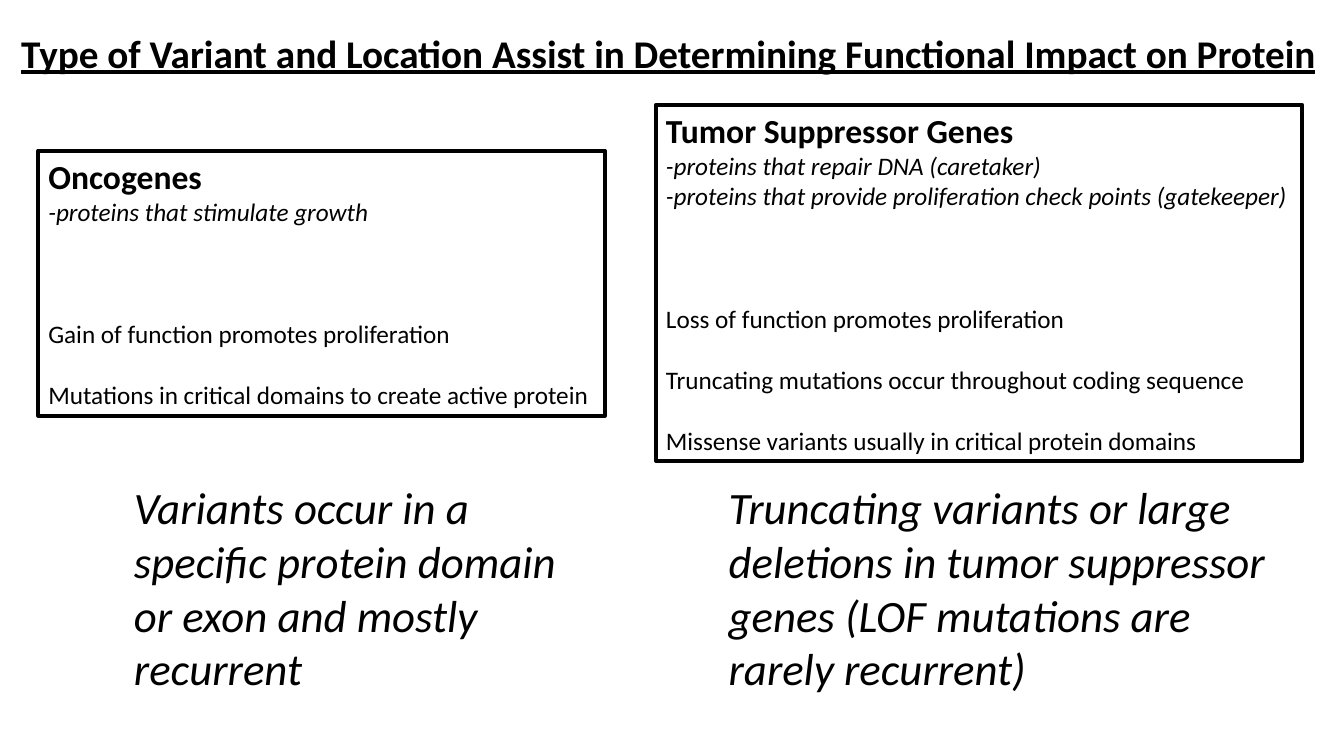
import pptx
import pptx.util
import pptx.dml.color
import pptx.enum.text

Pt = pptx.util.Pt
COLORS = {"ink": "000000", "paper": "FFFFFF"}
INK = pptx.dml.color.RGBColor.from_string(COLORS["ink"])
BLANK_LINE = 22

prs = pptx.Presentation()
prs.slide_width, prs.slide_height = Pt(960), Pt(540)
s = prs.slides.add_slide(prs.slide_layouts[6])
s.background.fill.solid()
s.background.fill.fore_color.rgb = pptx.dml.color.RGBColor.from_string(COLORS["paper"])


def add_box(left, top, width, height, wrap):
    sp = s.shapes.add_textbox(Pt(left), Pt(top), Pt(width), Pt(height))
    sp.text_frame.word_wrap = wrap
    sp.text_frame.auto_size = pptx.enum.text.MSO_AUTO_SIZE.SHAPE_TO_FIT_TEXT
    return sp


def format_run(p, size, bold=False, italic=False, underline=False):
    font = p.runs[0].font
    font.name, font.size, font.color.rgb = "Calibri", Pt(size), INK
    font.bold, font.italic, font.underline = bold, italic, underline


tf = add_box(8, 17.3, 962, 41.2, False).text_frame
tf.text = "Type of Variant and Location Assist in Determining Functional Impact on Protein"
format_run(tf.paragraphs[0], 28, bold=True, underline=True)

gene_classes = [
    ((27.4, 107.6, 404.6, 189.4), "Oncogenes",
     ["-proteins that stimulate growth"],
     ["Gain of function promotes proliferation",
      "Mutations in critical domains to create active protein"]),
    ((468.6, 74.9, 461.5, 254.2), "Tumor Suppressor Genes",
     ["-proteins that repair DNA (caretaker)",
      "-proteins that provide proliferation check points (gatekeeper)"],
     ["Loss of function promotes proliferation",
      "Truncating mutations occur throughout coding sequence",
      "Missense variants usually in critical protein domains"]),
]
for bounds, heading, roles, effects in gene_classes:
    sp = add_box(*bounds, False)
    sp.line.color.rgb = INK
    sp.line.width = Pt(3)
    tf = sp.text_frame
    tf.text = heading
    format_run(tf.paragraphs[0], 24, bold=True)
    for role in roles:
        p = tf.add_paragraph()
        p.text = role
        format_run(p, 18, italic=True)
    for i, effect in enumerate(effects):
        p = tf.add_paragraph()
        p.text = effect
        p.space_before = Pt(BLANK_LINE * (1 if i else 3))
        format_run(p, 18)

summaries = [
    (16.6, 406.8, "Variants occur in a specific protein domain or exon and mostly recurrent"),
    (441.4, 480.2, "Truncating variants or large deletions in tumor suppressor genes "
                   "(LOF mutations are rarely recurrent)"),
]
for left, width, summary in summaries:
    tf = add_box(left, 339.1, width, 162.7, True).text_frame
    tf.text = summary
    tf.paragraphs[0].level = 2
    format_run(tf.paragraphs[0], 32, italic=True)

prs.save("out.pptx")
